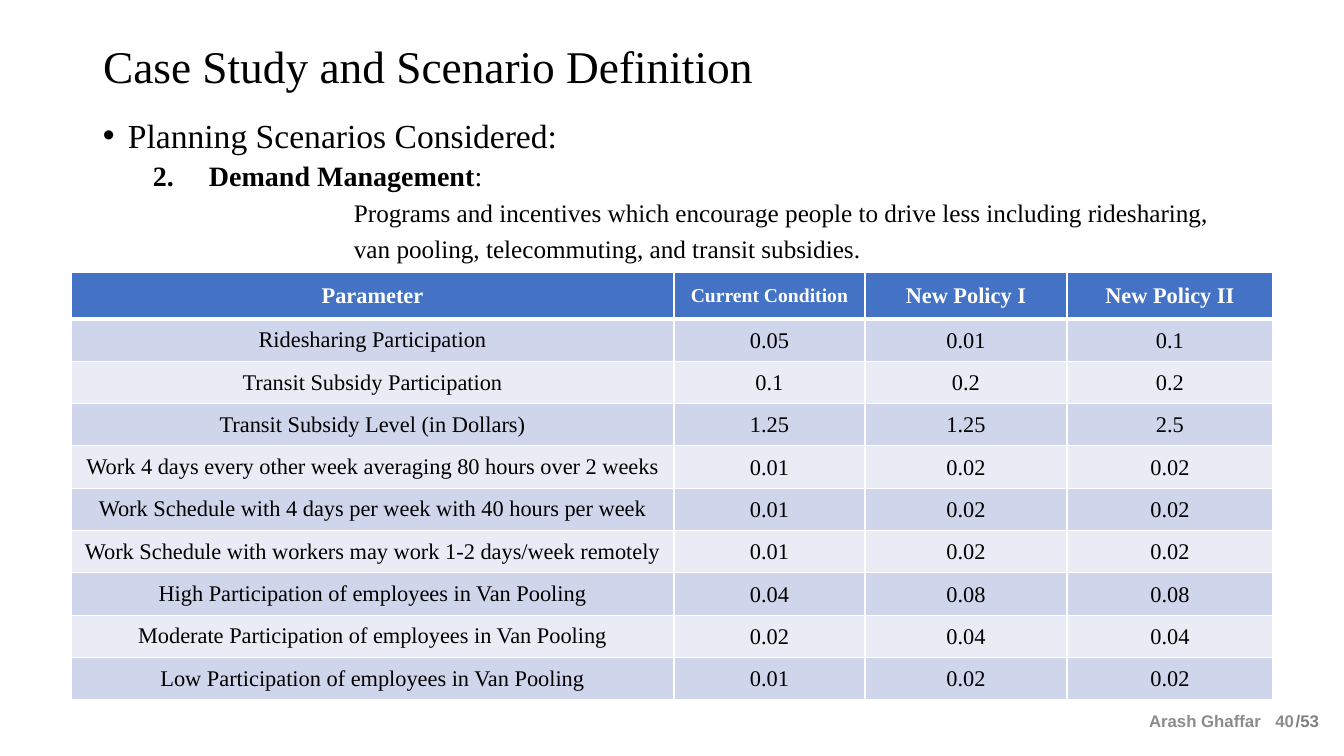
from lxml.etree import SubElement
from pptx import Presentation
from pptx.dml.color import RGBColor
from pptx.enum.text import MSO_ANCHOR, MSO_AUTO_SIZE, PP_ALIGN
from pptx.oxml.ns import qn
from pptx.util import Pt

PX = 914400 / 100.8  # EMU in one px
SERIF, SANS = "Times New Roman", "Arial"
COLORS = {
    "text": "000000", "white": "FFFFFF", "header": "4472C4",
    "band": "CFD5EA", "light_band": "E9EBF5",
    "presenter": "8C8C8C", "total": "808080",
}


def px(length):
    return round(length * PX)


def add_run(paragraph, text, size, color="text", bold=False, name=SERIF):
    run = paragraph.add_run()
    run.text = text
    font_format = {"size": Pt(size), "bold": bold, "name": name}
    for attribute, value in font_format.items():
        setattr(run.font, attribute, value)
    run.font.color.rgb = RGBColor.from_string(COLORS[color])


presentation = Presentation()
presentation.slide_width, presentation.slide_height = px(1344), px(756)
slide = presentation.slides.add_slide(presentation.slide_layouts[5])

# Title
title = slide.shapes.title
title_place = {"left": 93, "top": 40, "width": 1159, "height": 58}
for attribute, value in title_place.items():
    setattr(title, attribute, px(value))
title_format = {"vertical_anchor": MSO_ANCHOR.MIDDLE, "word_wrap": True,
                "auto_size": MSO_AUTO_SIZE.NONE}
for attribute, value in title_format.items():
    setattr(title.text_frame, attribute, value)
heading = title.text_frame.paragraphs[0]
heading.alignment, heading.line_spacing = PP_ALIGN.LEFT, 0.9
add_run(heading, "Case Study and Scenario Definition", 32.4)

# Scenario outline: runs, space before, left margin, first-line indent, bullet
outline = [
    ([("Planning Scenarios Considered:", 24, False)], 10, 25, -25,
     ("a:buChar", {"char": "•"})),
    ([("Demand Management", 20, True), (":", 20, False)], 5, 106, -56,
     ("a:buAutoNum", {"type": "arabicPeriod", "startAt": "2"})),
    ([("Programs and incentives which encourage people to drive less "
       "including ridesharing,", 18, False)], 6, 251, 0, ("a:buNone", {})),
    ([("van pooling, telecommuting, and transit subsidies.", 18, False)],
     6, 251, 0, ("a:buNone", {})),
]
scenario = slide.shapes.add_textbox(px(93), px(114), px(1159), px(156)).text_frame
scenario.word_wrap = True
for index, (runs, space, margin, indent, (bullet, settings)) in enumerate(outline):
    line = scenario.add_paragraph() if index else scenario.paragraphs[0]
    line.line_spacing, line.space_before = 0.9, Pt(space)
    for text, size, bold in runs:
        add_run(line, text, size, bold=bold)
    properties = line._p.get_or_add_pPr()
    properties.set("marL", str(px(margin)))
    properties.set("indent", str(px(indent)))
    if bullet == "a:buChar":
        SubElement(properties, qn("a:buFont"), typeface=SANS)
    SubElement(properties, qn(bullet), settings)

# Policy table
policies = [
    ("Parameter", "Current Condition", "New Policy I", "New Policy II"),
    ("Ridesharing Participation", "0.05", "0.01", "0.1"),
    ("Transit Subsidy Participation", "0.1", "0.2", "0.2"),
    ("Transit Subsidy Level (in Dollars)", "1.25", "1.25", "2.5"),
    ("Work 4 days every other week averaging 80 hours over 2 weeks",
     "0.01", "0.02", "0.02"),
    ("Work Schedule with 4 days per week with 40 hours per week",
     "0.01", "0.02", "0.02"),
    ("Work Schedule with workers may work 1-2 days/week remotely",
     "0.01", "0.02", "0.02"),
    ("High Participation of employees in Van Pooling", "0.04", "0.08", "0.08"),
    ("Moderate Participation of employees in Van Pooling",
     "0.02", "0.04", "0.04"),
    ("Low Participation of employees in Van Pooling", "0.01", "0.02", "0.02"),
]
column_widths = [603, 191, 202, 206]
table_height, header_height = 428, 47
row_height = (table_height - header_height) / (len(policies) - 1)
table = slide.shapes.add_table(
    len(policies), len(column_widths), px(71), px(272),
    px(sum(column_widths)), px(table_height)).table
for column, width in zip(table.columns, column_widths):
    column.width = px(width)

value_margins = {"margin_left": px(1), "margin_right": px(1),
                 "margin_top": px(1), "margin_bottom": 0}
for row, policy in enumerate(policies):
    is_header = row == 0
    table.rows[row].height = px(header_height if is_header else row_height)
    fill = "header" if is_header else "band" if row % 2 else "light_band"
    for col, text in enumerate(policy):
        cell = table.cell(row, col)
        cell.vertical_anchor = MSO_ANCHOR.MIDDLE
        if col and not is_header:
            for attribute, value in value_margins.items():
                setattr(cell, attribute, value)
        entry = cell.text_frame.paragraphs[0]
        entry.alignment = PP_ALIGN.CENTER
        add_run(entry, text, 14 if is_header and col == 1 else 16,
                "white" if is_header else "text", is_header)

        # White borders, heavier under the header
        border_points = {"a:lnL": 1, "a:lnR": 1,
                         "a:lnT": 3 if row == 1 else 1,
                         "a:lnB": 3 if is_header else 1}
        for side, points in border_points.items():
            border = SubElement(cell._tc.get_or_add_tcPr(), qn(side),
                                w=str(Pt(points)))
            paint = SubElement(border, qn("a:solidFill"))
            SubElement(paint, qn("a:srgbClr"), val=COLORS["white"])
        cell.fill.solid()
        cell.fill.fore_color.rgb = RGBColor.from_string(COLORS[fill])

# Footer: text, left, width, colour, each right-aligned on one line
footer = [
    ("Arash Ghaffar", 1002, 269, "presenter"),
    ("40", 1254, 50, "presenter"),
    ("/53", 1279, 50, "total"),
]
for text, left, width, color in footer:
    frame = slide.shapes.add_textbox(px(left), px(701), px(width), px(40)).text_frame
    frame.word_wrap, frame.vertical_anchor = True, MSO_ANCHOR.MIDDLE
    frame.paragraphs[0].alignment = PP_ALIGN.RIGHT
    add_run(frame.paragraphs[0], text, 12, color, True, SANS)

presentation.save("out.pptx")
